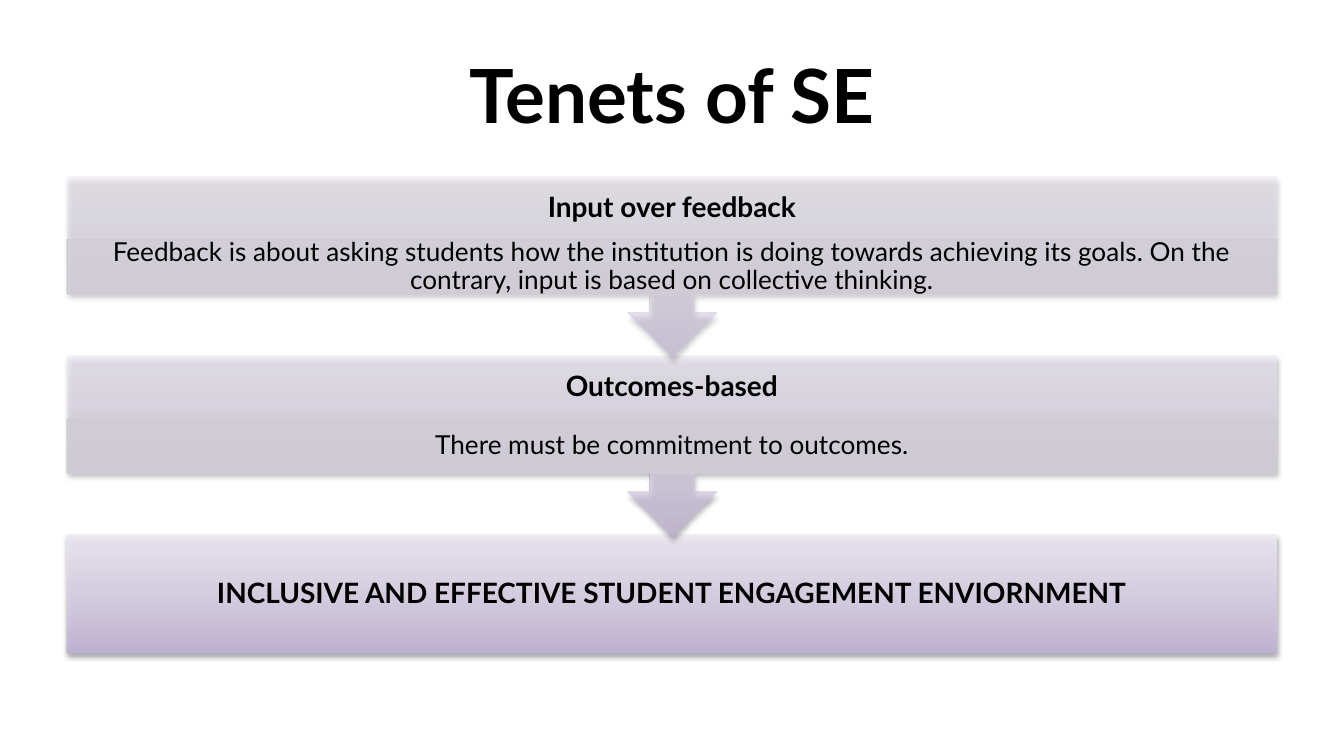
from lxml.etree import SubElement
from pptx import Presentation
from pptx.dml.color import RGBColor
from pptx.enum.shapes import MSO_SHAPE
from pptx.enum.text import MSO_ANCHOR, PP_ALIGN
from pptx.oxml.ns import qn
from pptx.util import Pt

TITLE = "Tenets of SE"
# heading, detail, opacity of the callout, opacity of the detail strip
TENETS = [
    ("Input over feedback",
     "Feedback is about asking students how the institution is doing towards "
     "achieving its goals. On the contrary, input is based on collective thinking.",
     50, 50),
    ("Outcomes-based", "There must be commitment to outcomes.", 70, 90),
]
RESULT = "INCLUSIVE AND EFFECTIVE STUDENT ENGAGEMENT ENVIORNMENT"

GRADIENT = [(0, "BFB1D4"), (35, "D2C9E0"), (100, "EEEAF4")]
STRIP, INK = "D0CCD5", "000000"
FONT = "Lato"

LEFT, WIDTH = 36, 648
TOP, PITCH = 94.5, 96
CALLOUT_HEIGHT, HEADING_HEIGHT, STRIP_HEIGHT = 97, 34, 29
RESULT_HEIGHT = 63.5


def color(code):
    return RGBColor.from_string(code)


def add_color(parent, code, opacity):
    node = SubElement(parent, qn("a:srgbClr"), val=code)
    SubElement(node, qn("a:alpha"), val=str(opacity * 1000))


def set_opacity(fill_node, opacity):
    code = fill_node.find(qn("a:srgbClr"))
    SubElement(code, qn("a:alpha"), val=str(opacity * 1000))


def add_panel(page, kind, top, height, opacity):
    """Add a shape with the upward gradient and a soft shadow below it."""
    panel = page.shapes.add_shape(kind, Pt(LEFT), Pt(top), Pt(WIDTH), Pt(height))
    panel.line.fill.background()
    panel.fill.gradient()
    gradient = panel._element.spPr.find(qn("a:gradFill"))
    gradient.set("rotWithShape", "0")
    for child in list(gradient):
        gradient.remove(child)
    stops = SubElement(gradient, qn("a:gsLst"))
    for position, code in GRADIENT:
        stop = SubElement(stops, qn("a:gs"), pos=str(position * 1000))
        add_color(stop, code, opacity)
    SubElement(gradient, qn("a:lin"), ang=str(270 * 60000), scaled="0")

    panel.shadow.inherit = False
    effects = panel._element.spPr.find(qn("a:effectLst"))
    shadow = SubElement(effects, qn("a:outerShdw"), blurRad=str(Pt(3.1)),
                        dist=str(Pt(1.6)), dir=str(90 * 60000), rotWithShape="0")
    add_color(shadow, INK, 38)
    return panel


def add_strip(page, top, opacity):
    strip = page.shapes.add_shape(
        MSO_SHAPE.RECTANGLE, Pt(LEFT), Pt(top), Pt(WIDTH), Pt(STRIP_HEIGHT))
    strip.shadow.inherit = False
    strip.fill.solid()
    strip.fill.fore_color.rgb = color(STRIP)
    strip.line.color.rgb = color(STRIP)
    strip.line.width = Pt(0.75)
    properties = strip._element.spPr
    set_opacity(properties.find(qn("a:solidFill")), opacity)
    set_opacity(properties.find(qn("a:ln")).find(qn("a:solidFill")), 90)
    return strip


def add_textbox(page, top, height):
    return page.shapes.add_textbox(Pt(LEFT), Pt(top), Pt(WIDTH), Pt(height))


def write(box, text, size, bold, inset, spacing=0.9):
    frame = box.text_frame
    frame.word_wrap = True
    frame.vertical_anchor = MSO_ANCHOR.MIDDLE
    frame.margin_left, frame.margin_top = Pt(inset[0]), Pt(inset[1])
    frame.margin_right, frame.margin_bottom = Pt(inset[0]), Pt(inset[1])
    para = frame.paragraphs[0]
    para.alignment = PP_ALIGN.CENTER
    para.line_spacing = spacing
    span = para.add_run()
    span.text = text
    span.font.name = FONT
    span.font.size = Pt(size)
    span.font.bold = bold
    span.font.color.rgb = color(INK)


def main():
    deck = Presentation()
    deck.slide_width, deck.slide_height = Pt(720), Pt(405)
    page = deck.slides.add_slide(deck.slide_layouts[6])

    write(add_textbox(page, 16.5, 67.5), TITLE, 40, True, (7.2, 3.6), 1.0)

    result = add_panel(page, MSO_SHAPE.RECTANGLE, TOP + PITCH * len(TENETS),
                       RESULT_HEIGHT, 90)
    write(result, RESULT, 15, True, (8.5, 8.5))

    # Lower steps come first so that each arrow lies over the step below it
    for index, tenet in reversed(list(enumerate(TENETS))):
        heading, detail, opacity, strip_opacity = tenet
        top = TOP + PITCH * index
        callout = add_panel(page, MSO_SHAPE.UP_ARROW_CALLOUT, top,
                            CALLOUT_HEIGHT, opacity)
        callout.rotation = 180
        write(add_textbox(page, top, HEADING_HEIGHT), heading, 15, True, (8.5, 8.5))
        strip = add_strip(page, top + HEADING_HEIGHT, strip_opacity)
        write(strip, detail, 14, False, (8, 1.5))

    deck.save("out.pptx")


if __name__ == "__main__":
    main()
